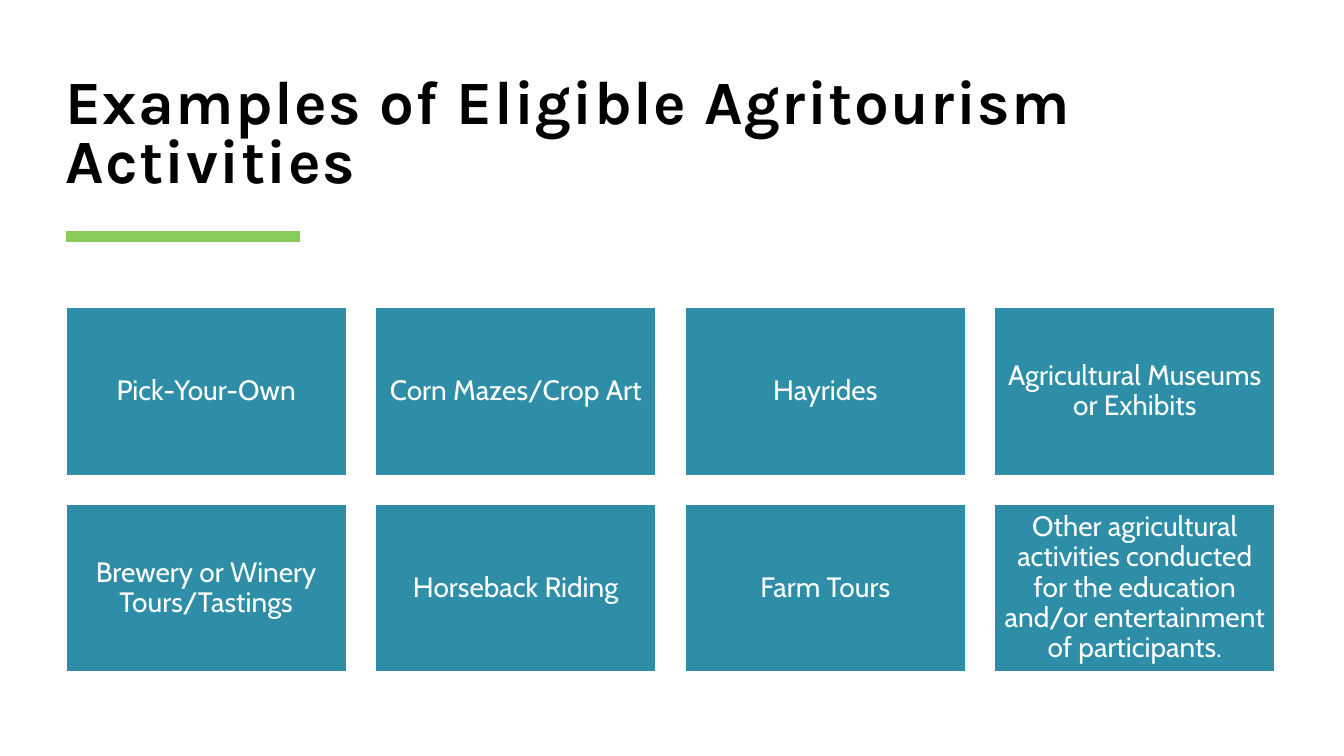
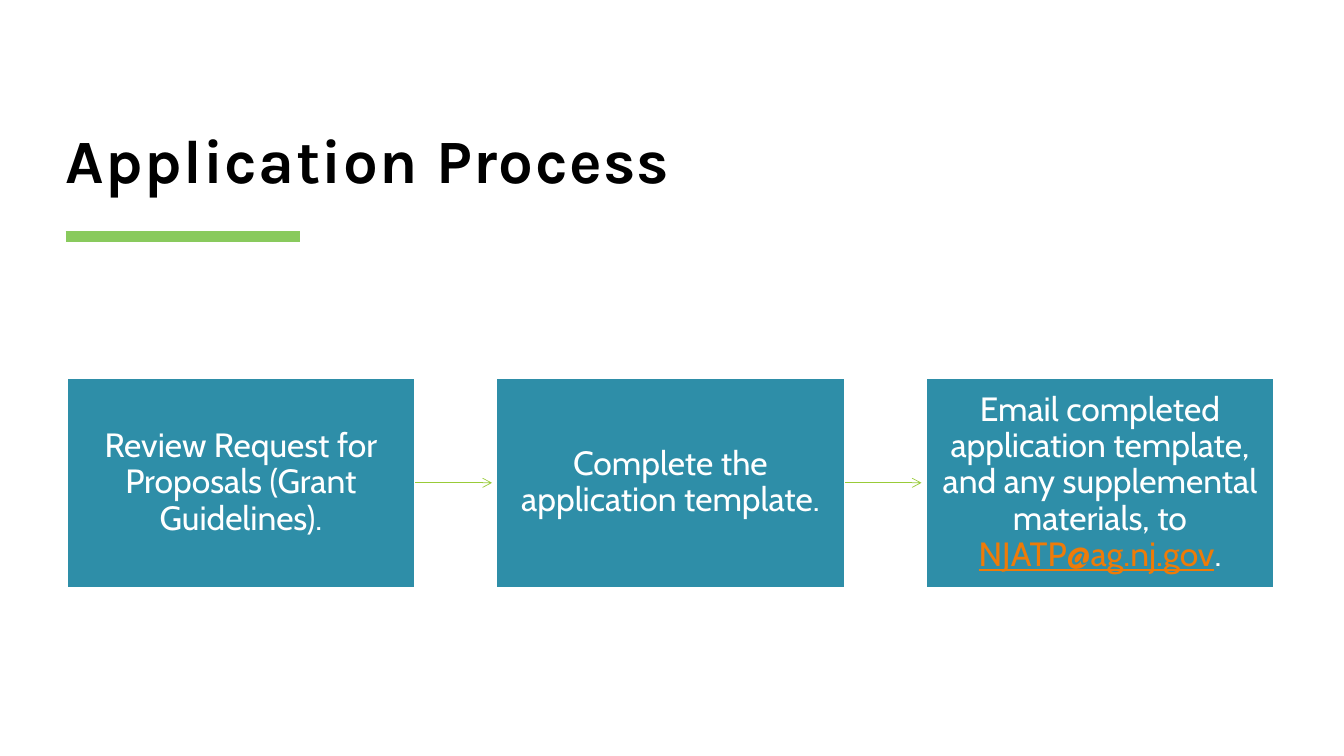
"""Build two slides on agritourism grants: eligible activities and the application process."""
from lxml.etree import SubElement
from pptx import Presentation
from pptx.dml.color import RGBColor
from pptx.enum.shapes import MSO_CONNECTOR as CONN, MSO_SHAPE as SHAPE
from pptx.enum.text import MSO_ANCHOR as ANCHOR, PP_ALIGN as ALIGN
from pptx.oxml.ns import qn
from pptx.util import Inches, Pt

BLACK, WHITE, TEAL = "000000", "FFFFFF", "2E8EA8"
GREEN, LIME, ORANGE = "89CA5D", "99CB38", "EE7B08"


def write(s, text, size, font="Cabin", color=WHITE, bold=False, underline=False,
          spacing=0, align=ALIGN.CENTER, leading=0.9, anchor=ANCHOR.MIDDLE, inset=0):
    tf = s.text_frame
    tf.word_wrap = True
    tf.vertical_anchor = anchor
    tf.margin_left = tf.margin_right = tf.margin_top = tf.margin_bottom = Inches(inset)
    p = tf.paragraphs[0]
    p.alignment, p.line_spacing = align, leading
    r = p.add_run()
    r.text = text
    r.font.name, r.font.size = font, Pt(size)
    r.font.bold, r.font.underline = bold, underline
    r.font.color.rgb = RGBColor.from_string(color)
    if spacing:
        r.font._element.set("spc", str(spacing * 100))


def add_line(shapes, x1, x2, y, color, width):
    line = shapes.add_connector(CONN.STRAIGHT, Inches(x1), Inches(y), Inches(x2), Inches(y))
    line.line.color.rgb = RGBColor.from_string(color)
    line.line.width = Pt(width)
    SubElement(line._element.spPr, qn("a:effectLst"))
    return line


activities = [
    ["Pick-Your-Own"],
    ["Corn Mazes/Crop Art"],
    ["Hayrides"],
    ["Agricultural Museums or Exhibits"],
    ["Brewery or Winery Tours/Tastings"],
    ["Horseback Riding"],
    ["Farm Tours"],
    ["Other agricultural activities conducted for the education "
     "and/or entertainment of participants."],
]
steps = [
    ["Review Request for Proposals (Grant Guidelines)."],
    ["Complete the application template."],
    ["Email completed application template, and any supplemental materials, to ",
     "NJATP@ag.nj.gov", "."],
]
slides = [
    dict(title="Examples of Eligible Agritourism Activities", cards=activities, columns=4,
         left=0.65, top=3.05, width=2.79, height=1.67, gap=0.28, size=20, inset=0.08,
         arrows=False),
    dict(title="Application Process", cards=steps, columns=3,
         left=0.66, top=3.75, width=3.46, height=2.08, gap=0.8, size=24, inset=0.14,
         arrows=True),
]

prs = Presentation()
prs.slide_width, prs.slide_height = Inches(13.33), Inches(7.5)

for d in slides:
    shapes = prs.slides.add_slide(prs.slide_layouts[6]).shapes
    add_line(shapes, 0.65, 2.98, 2.35, GREEN, 8)
    title = shapes.add_textbox(Inches(0.65), Inches(0.22), Inches(12), Inches(1.72))
    write(title, d["title"], 44, font="Karla", color=BLACK, bold=True, spacing=1,
          align=ALIGN.LEFT, leading=0.8, anchor=ANCHOR.BOTTOM)

    w, h, gap = d["width"], d["height"], d["gap"]
    previous = None
    for i, texts in enumerate(d["cards"]):
        row, column = divmod(i, d["columns"])
        x = d["left"] + column * (w + gap)
        y = d["top"] + row * (h + gap)
        card = shapes.add_shape(SHAPE.RECTANGLE, Inches(x), Inches(y), Inches(w), Inches(h))
        card.shadow.inherit = False
        card.fill.solid()
        card.fill.fore_color.rgb = RGBColor.from_string(TEAL)
        card.line.color.rgb = RGBColor.from_string(WHITE)
        card.line.width = Pt(1.5)
        for text in texts:
            is_email = "@" in text
            write(card, text, d["size"], color=ORANGE if is_email else WHITE,
                  underline=is_email, inset=d["inset"])
        if d["arrows"] and previous is not None:
            arrow = add_line(shapes, x - gap, x - 0.04, y + h / 2, LIME, 0.5)
            arrow.begin_connect(previous, 3)
            SubElement(arrow.line._get_or_add_ln(), qn("a:tailEnd"), type="arrow")
        previous = card

prs.save("out.pptx")
